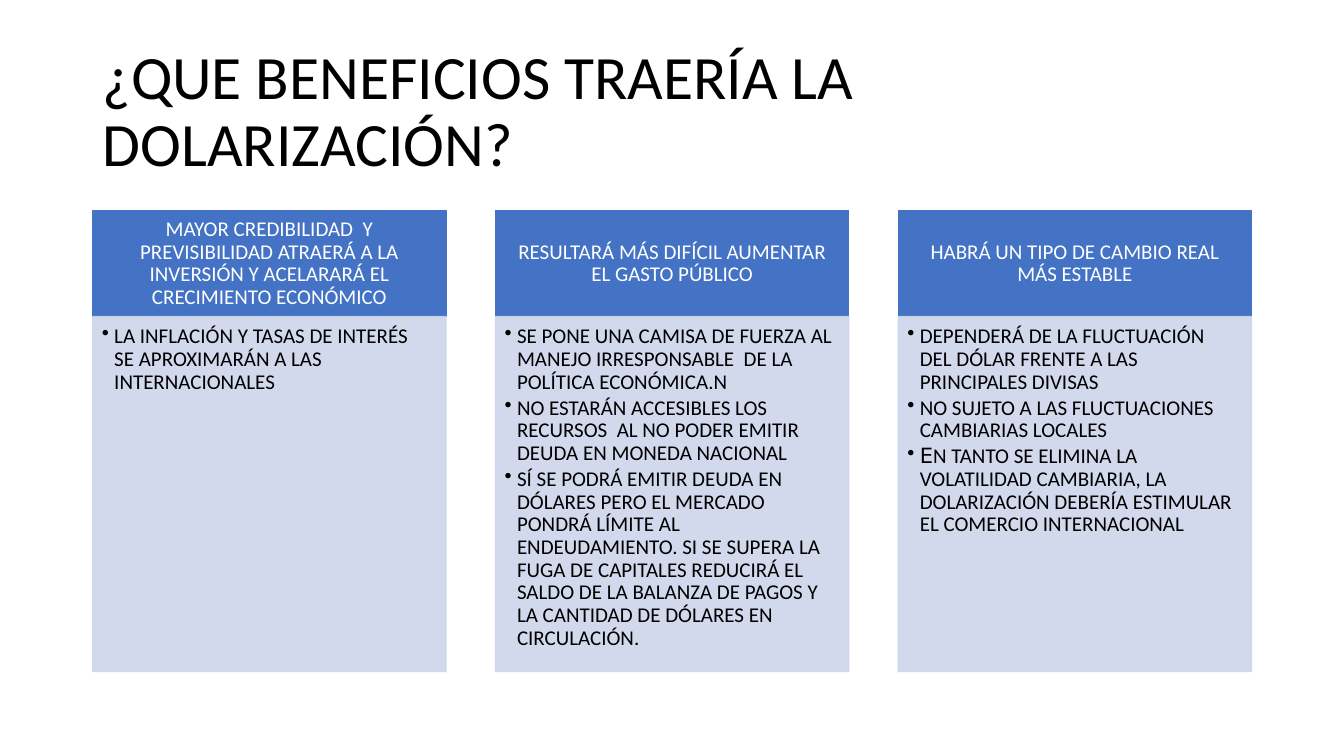
from dataclasses import dataclass

from lxml import etree
from pptx import Presentation
from pptx.dml.color import RGBColor
from pptx.enum import shapes, text
from pptx.oxml import ns
from pptx.shapes.autoshape import Shape
from pptx.slide import Slide
from pptx.text.text import _Paragraph as Paragraph
from pptx.util import Cm, Pt


@dataclass(frozen=True)
class Theme:
    font: str = "Calibri"
    initial_font: str = "DejaVu Sans"
    title_size: float = 44
    text_size: float = 15
    line_spacing: float = 0.9
    bullet_gap: float = 2.25
    ink: RGBColor = RGBColor(0x00, 0x00, 0x00)
    header_ink: RGBColor = RGBColor(0xFF, 0xFF, 0xFF)
    header_fill: RGBColor = RGBColor(0x44, 0x72, 0xC4)
    body_fill: RGBColor = RGBColor(0xCF, 0xD5, 0xEA)
    body_opacity: int = 90


@dataclass(frozen=True)
class Box:
    left: float
    top: float
    width: float
    height: float


@dataclass(frozen=True)
class Bullet:
    """A list item; initial is a first letter set in its own font."""
    wording: str
    initial: str = ""


@dataclass(frozen=True)
class Benefit:
    header: str
    bullets: tuple[Bullet, ...]


THEME = Theme()
TITLE = "¿QUE BENEFICIOS TRAERÍA LA DOLARIZACIÓN?"
TITLE_BOX = Box(2.33, 1.01, 29.21, 3.68)
COLUMN_PITCH = 10.15
HEADER_BOX = Box(2.34, 5.31, 8.9, 2.67)
BODY_BOX = Box(2.34, 7.98, 8.9, 8.94)
BULLET_INDENT = 0.31

BENEFITS = (
    Benefit(
        "MAYOR CREDIBILIDAD  Y PREVISIBILIDAD ATRAERÁ A LA INVERSIÓN Y "
        "ACELARARÁ EL CRECIMIENTO ECONÓMICO",
        (Bullet("LA INFLACIÓN Y TASAS DE INTERÉS  SE APROXIMARÁN A LAS INTERNACIONALES"),),
    ),
    Benefit(
        "RESULTARÁ MÁS DIFÍCIL AUMENTAR EL GASTO PÚBLICO",
        (
            Bullet("SE PONE UNA CAMISA DE FUERZA AL MANEJO IRRESPONSABLE  DE LA "
                   "POLÍTICA ECONÓMICA.N"),
            Bullet("NO ESTARÁN ACCESIBLES LOS RECURSOS  AL NO PODER EMITIR DEUDA "
                   "EN MONEDA NACIONAL"),
            Bullet("SÍ SE PODRÁ EMITIR DEUDA EN DÓLARES PERO EL MERCADO PONDRÁ LÍMITE "
                   "AL ENDEUDAMIENTO. SI SE SUPERA LA FUGA DE CAPITALES REDUCIRÁ EL "
                   "SALDO DE LA BALANZA DE PAGOS Y LA CANTIDAD DE DÓLARES EN CIRCULACIÓN."),
        ),
    ),
    Benefit(
        "HABRÁ UN TIPO DE CAMBIO REAL MÁS ESTABLE",
        (
            Bullet("DEPENDERÁ DE LA FLUCTUACIÓN DEL DÓLAR FRENTE A LAS PRINCIPALES DIVISAS"),
            Bullet("NO SUJETO A LAS FLUCTUACIONES CAMBIARIAS LOCALES"),
            Bullet("N TANTO SE ELIMINA LA VOLATILIDAD CAMBIARIA, LA DOLARIZACIÓN "
                   "DEBERÍA ESTIMULAR EL COMERCIO INTERNACIONAL", initial="E"),
        ),
    ),
)


def format_paragraph(para: Paragraph, size: float, color: RGBColor,
                     align: text.PP_ALIGN = text.PP_ALIGN.LEFT) -> None:
    para.alignment = align
    para.line_spacing = THEME.line_spacing
    para.space_before = Pt(0)
    for span in para.runs:
        span.font.name = THEME.font
        span.font.size = Pt(size)
        span.font.color.rgb = color


def add_panel(page: Slide, box: Box, shift: float, fill: RGBColor,
              insets: tuple[float, float, float, float]) -> Shape:
    """Adds a flat rectangle; insets are left, top, right, bottom in cm."""
    panel = page.shapes.add_shape(
        shapes.MSO_SHAPE.RECTANGLE,
        Cm(box.left + shift), Cm(box.top), Cm(box.width), Cm(box.height))
    panel.shadow.inherit = False
    panel.fill.solid()
    panel.fill.fore_color.rgb = fill
    panel.line.color.rgb = fill
    panel.line.width = Pt(1)
    frame = panel.text_frame
    frame.word_wrap = True
    frame.margin_left, frame.margin_top, frame.margin_right, frame.margin_bottom = map(Cm, insets)
    return panel


def set_opacity(panel: Shape, percent: int) -> None:
    """Applies to both the fill and the outline."""
    for color in panel.element.spPr.iter(ns.qn("a:srgbClr")):
        etree.SubElement(color, ns.qn("a:alpha")).set("val", str(percent * 1000))


def add_bullet_mark(para: Paragraph) -> None:
    properties = para._p.get_or_add_pPr()
    properties.set("marL", str(Cm(BULLET_INDENT)))
    properties.set("indent", str(-Cm(BULLET_INDENT)))
    etree.SubElement(properties, ns.qn("a:buChar")).set("char", "•")


def add_title(page: Slide) -> None:
    title = page.shapes.title
    title.left, title.top = Cm(TITLE_BOX.left), Cm(TITLE_BOX.top)
    title.width, title.height = Cm(TITLE_BOX.width), Cm(TITLE_BOX.height)
    frame = title.text_frame
    frame.text = TITLE
    frame.word_wrap = True
    frame.auto_size = text.MSO_AUTO_SIZE.NONE
    frame.vertical_anchor = text.MSO_ANCHOR.MIDDLE
    format_paragraph(frame.paragraphs[0], THEME.title_size, THEME.ink)


def add_header(page: Slide, wording: str, shift: float) -> None:
    panel = add_panel(page, HEADER_BOX, shift, THEME.header_fill, (0.3, 0.17, 0.3, 0.17))
    frame = panel.text_frame
    frame.text = wording
    frame.vertical_anchor = text.MSO_ANCHOR.MIDDLE
    format_paragraph(frame.paragraphs[0], THEME.text_size, THEME.header_ink,
                     text.PP_ALIGN.CENTER)


def add_body(page: Slide, bullets: tuple[Bullet, ...], shift: float) -> None:
    panel = add_panel(page, BODY_BOX, shift, THEME.body_fill, (0.23, 0.23, 0.3, 0.34))
    set_opacity(panel, THEME.body_opacity)
    frame = panel.text_frame
    frame.vertical_anchor = text.MSO_ANCHOR.TOP
    for index, bullet in enumerate(bullets):
        para = frame.add_paragraph() if index else frame.paragraphs[0]
        para.text = bullet.initial or bullet.wording
        if bullet.initial:
            para.add_run().text = bullet.wording
        format_paragraph(para, THEME.text_size, THEME.ink)
        if bullet.initial:
            para.runs[0].font.name = THEME.initial_font
        para.space_after = Pt(THEME.bullet_gap)
        add_bullet_mark(para)


def main() -> None:
    deck = Presentation()
    deck.slide_width, deck.slide_height = Cm(33.87), Cm(19.05)
    title_only = deck.slide_layouts.get_by_name("Title Only")
    page = deck.slides.add_slide(title_only)
    add_title(page)
    for column, benefit in enumerate(BENEFITS):
        shift = column * COLUMN_PITCH
        add_header(page, benefit.header, shift)
        add_body(page, benefit.bullets, shift)
    deck.save("out.pptx")


if __name__ == "__main__":
    main()
